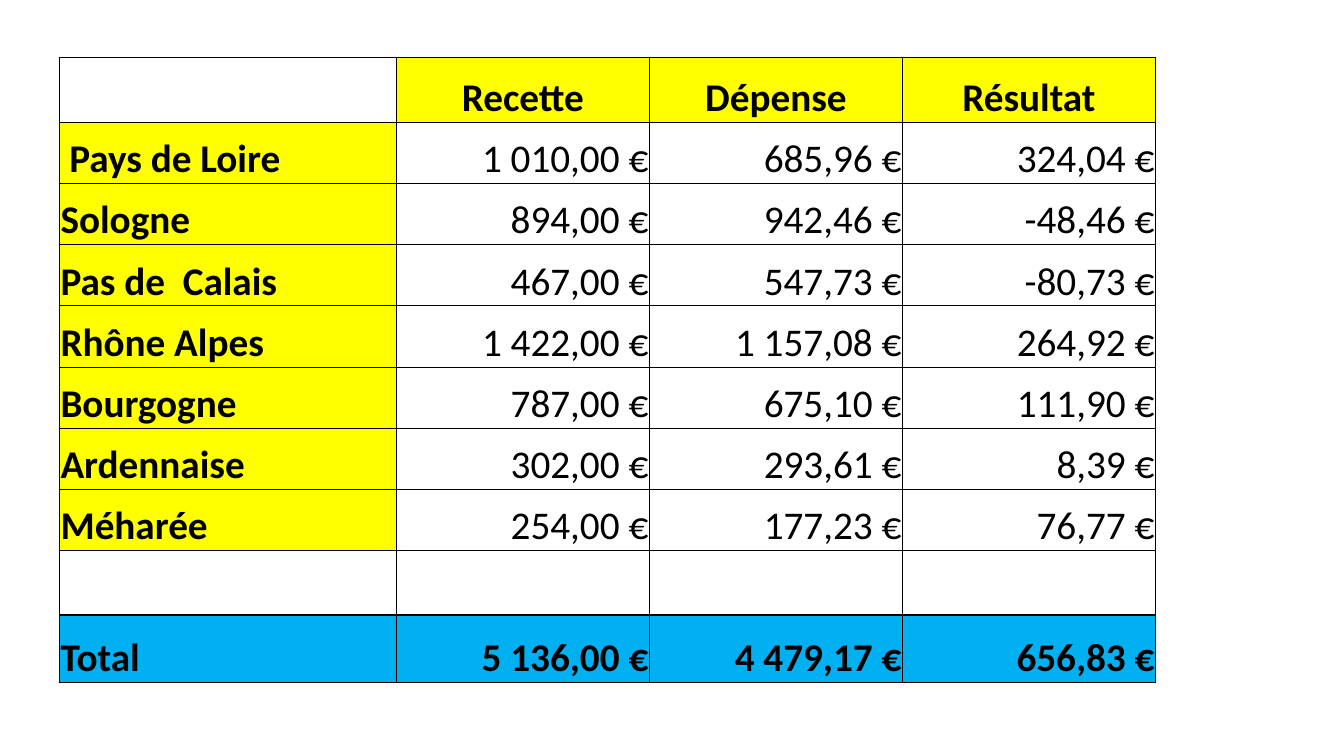
from dataclasses import dataclass

from lxml import etree
from pptx import Presentation
from pptx import util as u
from pptx.dml.color import RGBColor
from pptx.enum import text
from pptx.oxml import ns


@dataclass(frozen=True)
class Theme:
    font: str = "Calibri"
    size: int = 28
    ink: str = "000000"
    heading: str = "FFFF00"
    total: str = "00B0F0"
    thin: float = 0.5
    thick: float = 1.5


# Table content
HEADER = ("", "Recette", "Dépense", "Résultat")
TRIPS = (
    (" Pays de Loire", "1 010,00 €", "685,96 €", "324,04 €"),
    ("Sologne", "894,00 €", "942,46 €", "-48,46 €"),
    ("Pas de  Calais", "467,00 €", "547,73 €", "-80,73 €"),
    ("Rhône Alpes", "1 422,00 €", "1 157,08 €", "264,92 €"),
    ("Bourgogne", "787,00 €", "675,10 €", "111,90 €"),
    ("Ardennaise", "302,00 €", "293,61 €", "8,39 €"),
    ("Méharée", "254,00 €", "177,23 €", "76,77 €"),
)
SPACER = ("", "", "", "")
TOTAL = ("Total", "5 136,00 €", "4 479,17 €", "656,83 €")

# Table grid, in percent of the slide's width and height
LEFT, TOP = 4.43, 7.6
COLUMNS = [25.06] + [18.83] * 3
ROWS = [8.53] + [8.1] * len(TRIPS) + [8.53, 8.93]


class Deck:
    def __init__(self, theme):
        self.theme = theme
        self.prs = Presentation()
        self.prs.slide_width, self.prs.slide_height = u.Inches(13.33), u.Inches(7.5)
        self.s = self.prs.slides.add_slide(self.prs.slide_layouts[6])

    def x(self, percent):
        return u.Emu(round(self.prs.slide_width * percent / 100))

    def y(self, percent):
        return u.Emu(round(self.prs.slide_height * percent / 100))

    def table(self, left, top, columns, rows):
        frame = self.s.shapes.add_table(
            len(rows), len(columns), self.x(left), self.y(top),
            self.x(sum(columns)), self.y(sum(rows)))
        table = frame.table
        table.first_row = table.horz_banding = False
        for column, width in zip(table.columns, columns):
            column.width = self.x(width)
        for row, height in zip(table.rows, rows):
            row.height = self.y(height)
        return table

    def borders(self, cell, **widths):
        tcPr = cell._tc.get_or_add_tcPr()
        for side in "LRTB":
            ln = etree.SubElement(tcPr, ns.qn(f"a:ln{side}"),
                                  w=str(u.Pt(widths[side])))
            fill = etree.SubElement(ln, ns.qn("a:solidFill"))
            etree.SubElement(fill, ns.qn("a:srgbClr"), val=self.theme.ink)

    def cell(self, cell, words, fill, bold, align):
        # Fill and insets
        if fill:
            cell.fill.solid()
            cell.fill.fore_color.rgb = RGBColor.from_string(fill)
        else:
            cell.fill.background()
        inset = u.Inches(0.01)
        layout = {"margin_left": inset, "margin_right": inset, "margin_top": inset,
                  "margin_bottom": 0, "vertical_anchor": text.MSO_ANCHOR.BOTTOM}
        for name, value in layout.items():
            setattr(cell, name, value)

        # Text
        p = cell.text_frame.paragraphs[0]
        p.alignment = align
        if not words:
            return
        r = p.add_run()
        r.text = words
        r.font.color.rgb = RGBColor.from_string(self.theme.ink)
        style = {"name": self.theme.font, "size": u.Pt(self.theme.size), "bold": bold}
        for name, value in style.items():
            setattr(r.font, name, value)


def main():
    theme = Theme()
    deck = Deck(theme)
    table = deck.table(LEFT, TOP, COLUMNS, ROWS)
    last_row, last_column = len(ROWS) - 1, len(COLUMNS) - 1

    for i, record in enumerate((HEADER, *TRIPS, SPACER, TOTAL)):
        for j, words in enumerate(record):
            cell = table.cell(i, j)

            # Thick outline and a thick rule above the total
            thick = {"L": j == 0, "R": j == last_column,
                     "T": i in (0, last_row), "B": i >= last_row - 1}
            deck.borders(cell, **{side: theme.thick if on else theme.thin
                                  for side, on in thick.items()})

            # Headings in yellow, total in blue, amounts plain
            is_heading = bool(words) and (i == 0 or j == 0)
            if i == last_row:
                fill = theme.total
            else:
                fill = theme.heading if is_heading else None
            if j == 0:
                align = text.PP_ALIGN.LEFT
            else:
                align = text.PP_ALIGN.CENTER if i == 0 else text.PP_ALIGN.RIGHT
            deck.cell(cell, words, fill, is_heading or i == last_row, align)

    deck.prs.save("out.pptx")


if __name__ == "__main__":
    main()
